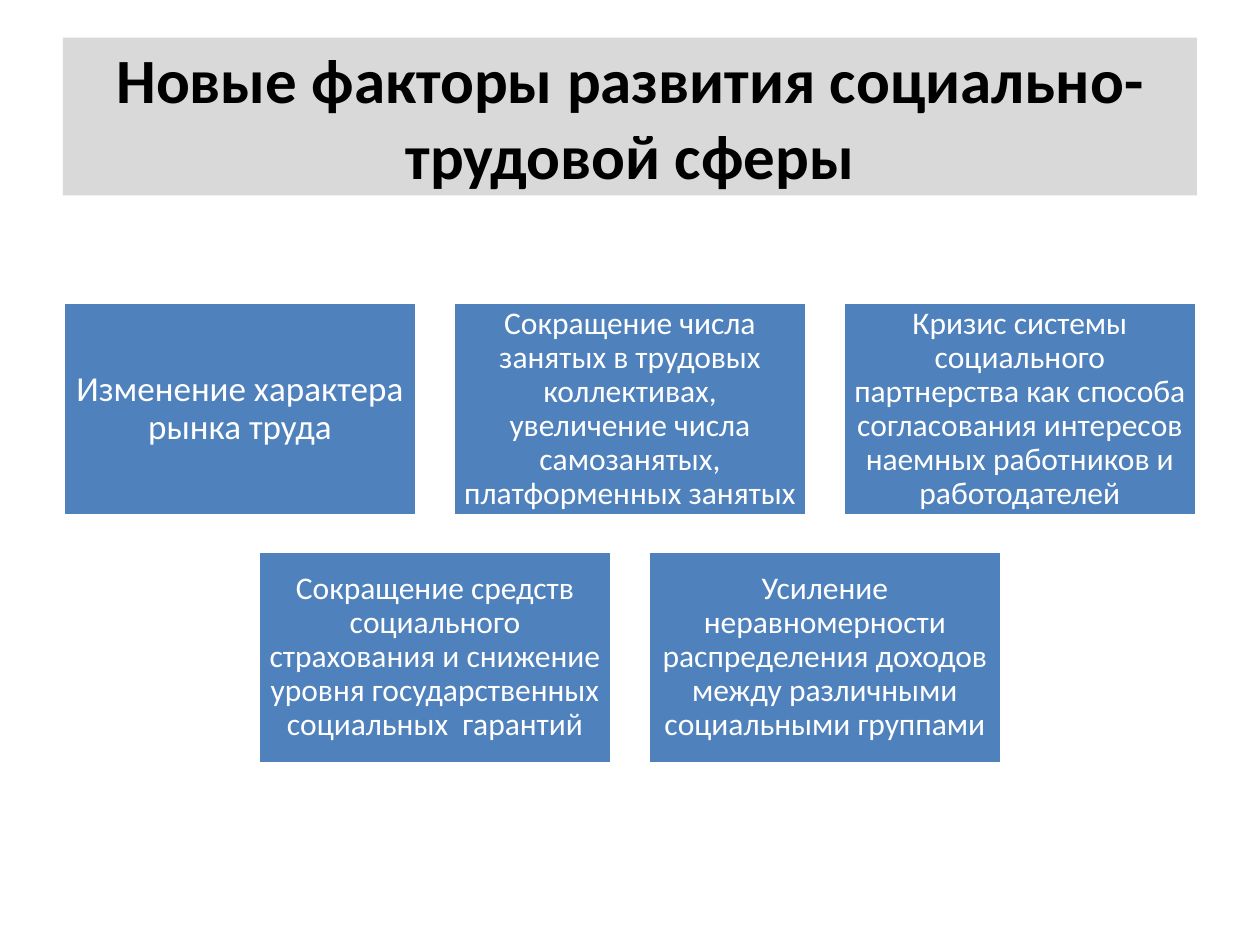
import dataclasses

import pptx
import pptx.dml.color
import pptx.enum.shapes
import pptx.enum.text
import pptx.util

Cm = pptx.util.Cm
Pt = pptx.util.Pt
RGB = pptx.dml.color.RGBColor.from_string

WIDTH, HEIGHT = 25.4, 19.05
CARD_W, CARD_H, GAP = 7.14, 4.29, 0.72
TOP = 6.1


@dataclasses.dataclass(frozen=True)
class Theme:
    font: str = "Calibri"
    band: str = "D9D9D9"
    card: str = "4F81BD"
    dark: str = "000000"
    light: str = "FFFFFF"
    head: int = 36
    large: int = 20
    small: int = 18
    edge: int = 2


class Board:
    def __init__(self, slide, theme):
        self.slide = slide
        self.theme = theme

    def panel(self, box, fill, text, size, color):
        """Add a filled rectangle with centred text; box is in centimetres."""
        shape = self.slide.shapes.add_shape(
            pptx.enum.shapes.MSO_SHAPE.RECTANGLE, *map(Cm, box))
        shape.shadow.inherit = False
        shape.fill.solid()
        shape.fill.fore_color.rgb = RGB(fill)
        shape.line.fill.background()
        frame = shape.text_frame
        frame.word_wrap = True
        frame.vertical_anchor = pptx.enum.text.MSO_ANCHOR.MIDDLE
        frame.text = text
        para = frame.paragraphs[0]
        para.alignment = pptx.enum.text.PP_ALIGN.CENTER
        para.font.name = self.theme.font
        para.font.size = Pt(size)
        para.font.color.rgb = RGB(color)
        return shape

    def title(self, text):
        look = self.theme
        shape = self.panel((1.27, 0.76, 22.86, 3.18), look.band, text,
                           look.head, look.dark)
        shape.text_frame.paragraphs[0].font.bold = True

    def card(self, left, top, text, size, inset):
        look = self.theme
        shape = self.panel((left, top, CARD_W, CARD_H), look.card, text,
                           size, look.light)
        shape.line.color.rgb = RGB(look.light)
        shape.line.width = Pt(look.edge)
        frame = shape.text_frame
        frame.margin_left = frame.margin_right = Cm(inset)
        frame.margin_top = frame.margin_bottom = Cm(inset)
        frame.paragraphs[0].line_spacing = 0.9

    def row(self, top, cards):
        """Place cards side by side, centred on the slide."""
        step = CARD_W + GAP
        left = (WIDTH - len(cards) * step + GAP) / 2
        for i, (text, size, inset) in enumerate(cards):
            self.card(left + i * step, top, text, size, inset)


def main():
    deck = pptx.Presentation()
    deck.slide_width, deck.slide_height = Cm(WIDTH), Cm(HEIGHT)
    theme = Theme()
    board = Board(deck.slides.add_slide(deck.slide_layouts[6]), theme)
    large, small = (theme.large, 0.2), (theme.small, 0.18)

    board.title("Новые факторы развития социально-трудовой сферы")
    rows = [
        [("Изменение характера рынка труда", *large),
         ("Сокращение числа занятых в трудовых коллективах, увеличение "
          "числа самозанятых, платформенных занятых", *small),
         ("Кризис системы социального партнерства как способа согласования "
          "интересов наемных работников и работодателей", *small)],
        [("Сокращение средств социального страхования и снижение уровня "
          "государственных социальных  гарантий", *small),
         ("Усиление неравномерности распределения доходов между различными "
          "социальными группами", *small)],
    ]
    for i, cards in enumerate(rows):
        board.row(TOP + i * (CARD_H + GAP), cards)
    deck.save("out.pptx")


if __name__ == "__main__":
    main()
